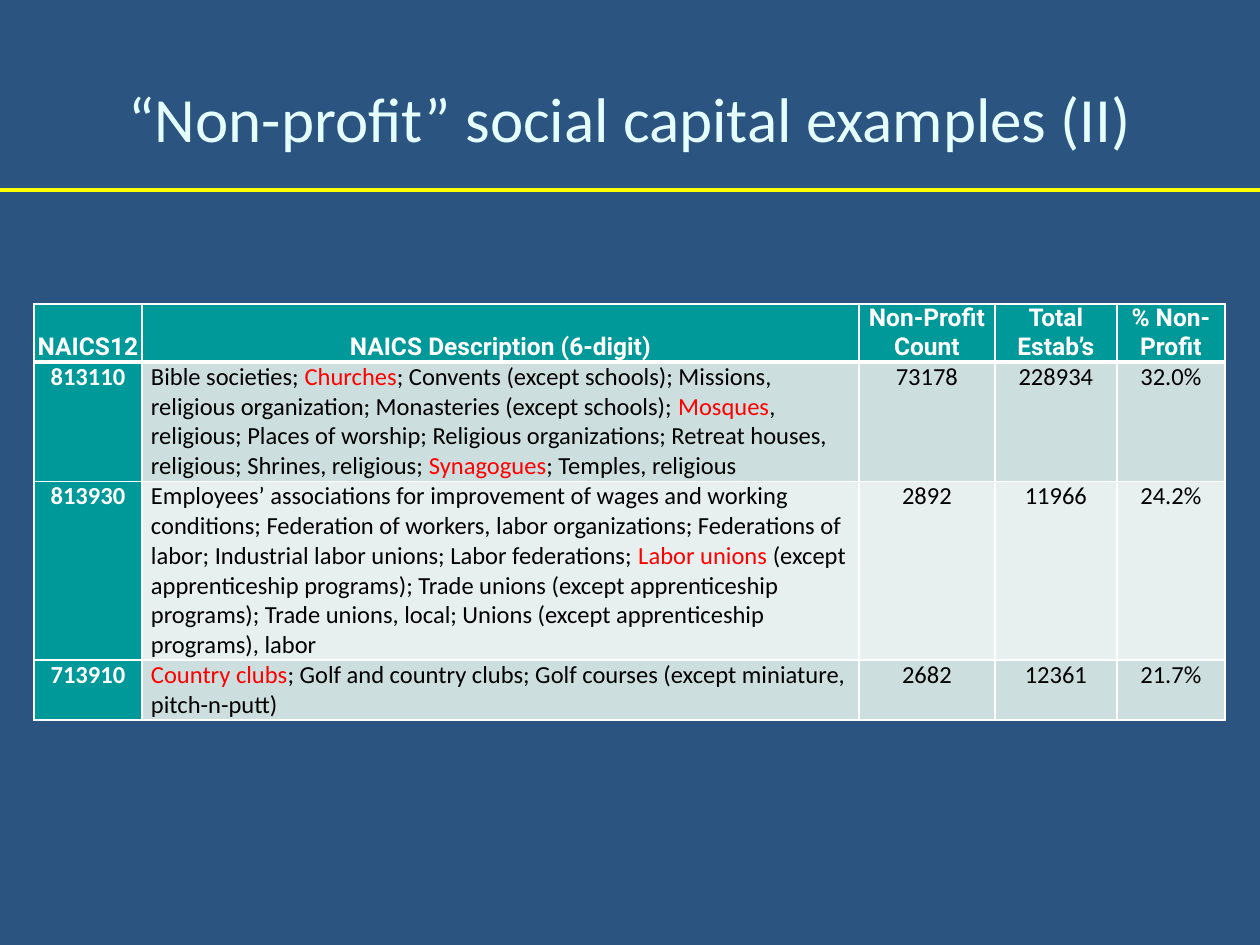
import lxml.etree
import pptx
import pptx.dml.color
import pptx.enum.shapes
import pptx.enum.text
import pptx.oxml.ns
import pptx.util

EMU_PER_PX = 914400 / 126
COLORS = {
    "page": "2B5481",
    "title": "E5FFFF",
    "rule": "FFFF00",
    "header": "009999",
    "odd": "CCDEDE",
    "even": "E7EFEF",
    "white": "FFFFFF",
    "text": "000000",
    "highlight": "FF0000",
}
COLUMN_WIDTHS = [108, 717, 136, 122, 108]
ROW_HEIGHTS = [57, 117, 178, 60]
HEADINGS = ["NAICS12", "NAICS Description (6-digit)", "Non-Profit Count",
            "Total Estab’s", "% Non-Profit"]
# Asterisks enclose the highlighted words.
INDUSTRIES = [
    ["813110",
     "Bible societies; *Churches*; Convents (except schools); Missions, "
     "religious organization; Monasteries (except schools); *Mosques*, "
     "religious; Places of worship; Religious organizations; Retreat houses, "
     "religious; Shrines, religious; *Synagogues*; Temples, religious",
     "73178", "228934", "32.0%"],
    ["813930",
     "Employees’ associations for improvement of wages and working "
     "conditions; Federation of workers, labor organizations; Federations of "
     "labor; Industrial labor unions; Labor federations; *Labor unions *(except "
     "apprenticeship programs); Trade unions (except apprenticeship "
     "programs); Trade unions, local; Unions (except apprenticeship "
     "programs), labor",
     "2892", "11966", "24.2%"],
    ["713910",
     "*Country clubs*; Golf and country clubs; Golf courses (except miniature, "
     "pitch-n-putt)",
     "2682", "12361", "21.7%"],
]


def px(length):
    return pptx.util.Emu(round(length * EMU_PER_PX))


def color(name):
    return pptx.dml.color.RGBColor.from_string(COLORS[name])


def add_span(para, text, size, color_name, font="Calibri", bold=False):
    span = para.add_run()
    span.text = text
    span.font.size = pptx.util.Pt(size)
    span.font.name = font
    span.font.bold = bold
    span.font.color.rgb = color(color_name)


def add_title(page, text):
    box = page.shapes.title
    box.left, box.top, box.width, box.height = px(63), px(23), px(1134), px(189)
    box.text_frame.vertical_anchor = pptx.enum.text.MSO_ANCHOR.MIDDLE
    para = box.text_frame.paragraphs[0]
    para.alignment = pptx.enum.text.PP_ALIGN.CENTER
    add_span(para, text, 36, "title")


def add_rule(page, top, width):
    rule = page.shapes.add_connector(
        pptx.enum.shapes.MSO_CONNECTOR.STRAIGHT, 0, px(top), px(width), px(top))
    rule.line.color.rgb = color("rule")
    rule.line.width = pptx.util.Pt(2)
    lxml.etree.SubElement(rule.element.spPr, pptx.oxml.ns.qn("a:effectLst"))


def set_borders(cell, bottom):
    """Draw white 1 pt borders, with the given width in points below."""
    properties = cell._tc.get_or_add_tcPr()
    for side, width in (("L", 1), ("R", 1), ("T", 1), ("B", bottom)):
        line = lxml.etree.SubElement(
            properties, pptx.oxml.ns.qn(f"a:ln{side}"), w=str(pptx.util.Pt(width)))
        fill = lxml.etree.SubElement(line, pptx.oxml.ns.qn("a:solidFill"))
        lxml.etree.SubElement(
            fill, pptx.oxml.ns.qn("a:srgbClr"), val=COLORS["white"])


def format_cell(cell, fill, side_margin, anchor, bottom=1):
    set_borders(cell, bottom)
    cell.fill.solid()
    cell.fill.fore_color.rgb = color(fill)
    cell.margin_left = cell.margin_right = px(side_margin)
    cell.margin_top = cell.margin_bottom = 0
    cell.vertical_anchor = anchor


def fill_header(cell, text):
    format_cell(cell, "header", 1, pptx.enum.text.MSO_ANCHOR.BOTTOM, bottom=3)
    para = cell.text_frame.paragraphs[0]
    para.alignment = pptx.enum.text.PP_ALIGN.CENTER
    add_span(para, text, 14, "white", "Roboto", bold=True)


def fill_body(cell, text, row, column):
    is_code, is_description = column == 0, column == 1
    band = "odd" if row % 2 else "even"
    format_cell(cell, "header" if is_code else band, 9,
                pptx.enum.text.MSO_ANCHOR.TOP)
    para = cell.text_frame.paragraphs[0]
    align = pptx.enum.text.PP_ALIGN
    para.alignment = align.LEFT if is_description else align.CENTER
    plain = "white" if is_code else "text"
    for index, part in enumerate(text.split("*")):
        if part:
            add_span(para, part, 14, "highlight" if index % 2 else plain,
                     bold=is_code)


def add_industry_table(page, left, top):
    table = page.shapes.add_table(
        len(ROW_HEIGHTS), len(COLUMN_WIDTHS), px(left), px(top),
        px(sum(COLUMN_WIDTHS)), px(sum(ROW_HEIGHTS))).table
    for column, width in zip(table.columns, COLUMN_WIDTHS):
        column.width = px(width)
    for row, height in zip(table.rows, ROW_HEIGHTS):
        row.height = px(height)
    for column, heading in enumerate(HEADINGS):
        fill_header(table.cell(0, column), heading)
    for row, industry in enumerate(INDUSTRIES, start=1):
        for column, text in enumerate(industry):
            fill_body(table.cell(row, column), text, row, column)


def main():
    deck = pptx.Presentation()
    deck.slide_width, deck.slide_height = px(1260), px(945)
    page = deck.slides.add_slide(deck.slide_layouts.get_by_name("Title Only"))
    page.background.fill.solid()
    page.background.fill.fore_color.rgb = color("page")
    add_title(page, "“Non-profit” social capital examples (II)")
    add_rule(page, 190, 1260)
    add_industry_table(page, 34, 304)
    deck.save("out.pptx")


if __name__ == "__main__":
    main()
